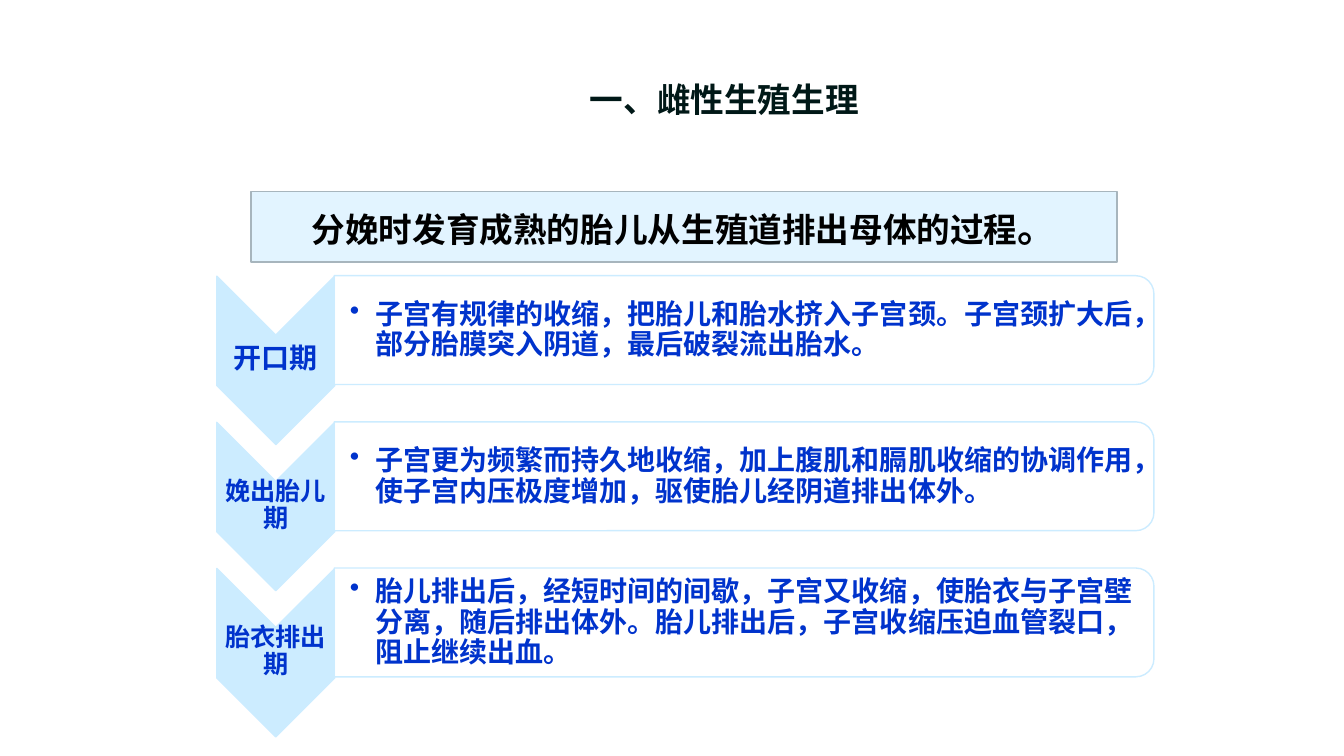
"""Build the slide on the three stages of giving birth."""
from lxml import etree
from pptx import Presentation
from pptx.dml.color import RGBColor
from pptx.enum.shapes import MSO_SHAPE
from pptx.enum.text import MSO_ANCHOR, MSO_AUTO_SIZE, PP_ALIGN
from pptx.oxml.ns import qn
from pptx.util import Inches, Pt

RECTANGLE = MSO_SHAPE.RECTANGLE
CHEVRON = MSO_SHAPE.CHEVRON
PANEL = MSO_SHAPE.ROUND_2_SAME_RECTANGLE
MIDDLE = MSO_ANCHOR.MIDDLE
NO_FIT = MSO_AUTO_SIZE.NONE
LEFT, CENTER = PP_ALIGN.LEFT, PP_ALIGN.CENTER

CJK_FONT = "Noto Sans CJK SC"
BODY_FONT = "Times New Roman"
COLORS = {
    "title": "001817",
    "text": "0033CC",
    "black": "000000",
    "white": "FFFFFF",
    "stage": "CCECFF",
    "definition": "E2F4FF",
    "definition_line": "A7B5BD",
}
FIRST_TOP, STAGE_STEP = 2.79, 1.45
STAGES = [
    ("开口期", 20,
     "子宫有规律的收缩，把胎儿和胎水挤入子宫颈。子宫颈扩大后，部分胎膜突入阴道，最后破裂流出胎水。"),
    ("娩出胎儿期", 18,
     "子宫更为频繁而持久地收缩，加上腹肌和膈肌收缩的协调作用，使子宫内压极度增加，驱使胎儿经阴道排出体外。"),
    ("胎衣排出期", 18,
     "胎儿排出后，经短时间的间歇，子宫又收缩，使胎衣与子宫壁分离，随后排出体外。"
     "胎儿排出后，子宫收缩压迫血管裂口，阻止继续出血。"),
]


def color(name):
    """Return the named colour."""
    return RGBColor.from_string(COLORS[name])


def add_span(para, text, size, font=BODY_FONT, fill="text"):
    """Add a bold run of text to a paragraph."""
    span = para.add_run()
    span.text = text
    span.font.size = Pt(size)
    span.font.name = font
    span.font.bold = True
    span.font.color.rgb = color(fill)
    east_asian = etree.Element(qn("a:ea"), typeface=CJK_FONT)
    span.font._element.find(qn("a:latin")).addnext(east_asian)


def add_bullet(para):
    """Give a paragraph a bullet with a hanging indent."""
    properties = para._p.get_or_add_pPr()
    properties.set("marL", str(Inches(0.25)))
    properties.set("indent", str(-Inches(0.25)))
    etree.SubElement(properties, qn("a:buChar"), char="•")


def add_shape(page, kind, place, fill, line, rotation=0, alpha=None):
    """Add a filled, outlined shape without a shadow."""
    shape = page.shapes.add_shape(kind, *map(Inches, place))
    shape.shadow.inherit = False
    shape.rotation = rotation
    shape.fill.solid()
    shape.fill.fore_color.rgb = color(fill)
    if alpha is not None:
        fill_color = shape._element.spPr.find(qn("a:solidFill"))[0]
        etree.SubElement(fill_color, qn("a:alpha"), val=str(alpha * 1000))
    shape.line.color.rgb = color(line)
    shape.line.width = Pt(1)
    return shape


def add_text(page, place, text, size, align=LEFT, left_inset=0.01,
             after=0.15, bullet=False):
    """Add a wrapped text box centred on its height."""
    box = page.shapes.add_textbox(*map(Inches, place))
    frame = box.text_frame
    frame.word_wrap = True
    frame.vertical_anchor = MIDDLE
    frame.margin_left = Inches(left_inset)
    frame.margin_top = frame.margin_right = frame.margin_bottom = Inches(0.01)
    para = frame.paragraphs[0]
    if bullet:
        para.level = 1
        add_bullet(para)
    para.alignment = align
    para.line_spacing = 0.9
    para.space_after = Pt(size * after)
    add_span(para, text, size)


def set_title(page, text):
    """Place and format the slide title."""
    title = page.shapes.title
    title.left, title.top = Inches(5.75), Inches(0.73)
    title.width, title.height = Inches(2.91), Inches(0.5)
    frame = title.text_frame
    frame.word_wrap = False
    frame.auto_size = NO_FIT
    frame.vertical_anchor = MIDDLE
    para = frame.paragraphs[0]
    para.alignment = LEFT
    para.line_spacing = 1.0
    add_span(para, text, 24, font=CJK_FONT, fill="title")


def add_definition(page):
    """Add the framed definition above the stages."""
    box = add_shape(page, RECTANGLE, (2.49, 1.9, 8.59, 0.7),
                    "definition", "definition_line")
    box.text_frame.vertical_anchor = MIDDLE
    para = box.text_frame.paragraphs[0]
    para.alignment = CENTER
    add_span(para, "分娩时发育成熟的胎儿从生殖道排出母体的过程", 24,
             font="Arial", fill="black")
    add_span(para, "。", 28, font="Arial", fill="black")


def add_stage(page, top, label, label_size, detail):
    """Add one stage: a downward chevron and its description panel."""
    add_shape(page, CHEVRON, (1.9, top + 0.2, 1.67, 1.17),
              "stage", "stage", rotation=90)
    add_text(page, (2.15, top + 0.53, 1.17, 0.5), label, label_size,
             align=CENTER, after=0.35)
    add_shape(page, PANEL, (6.84, top - 3.58, 1.08, 8.13),
              "white", "stage", rotation=90, alpha=90)
    add_text(page, (3.31, top, 8.08, 0.98), detail, 20,
             left_inset=0.16, bullet=True)


def main():
    """Build and save the deck."""
    deck = Presentation()
    deck.slide_width, deck.slide_height = Inches(13.33), Inches(7.5)
    page = deck.slides.add_slide(deck.slide_layouts[5])
    set_title(page, "一、雌性生殖生理")
    add_definition(page)
    for index, stage in enumerate(STAGES):
        add_stage(page, FIRST_TOP + index * STAGE_STEP, *stage)
    deck.save("out.pptx")


if __name__ == "__main__":
    main()
